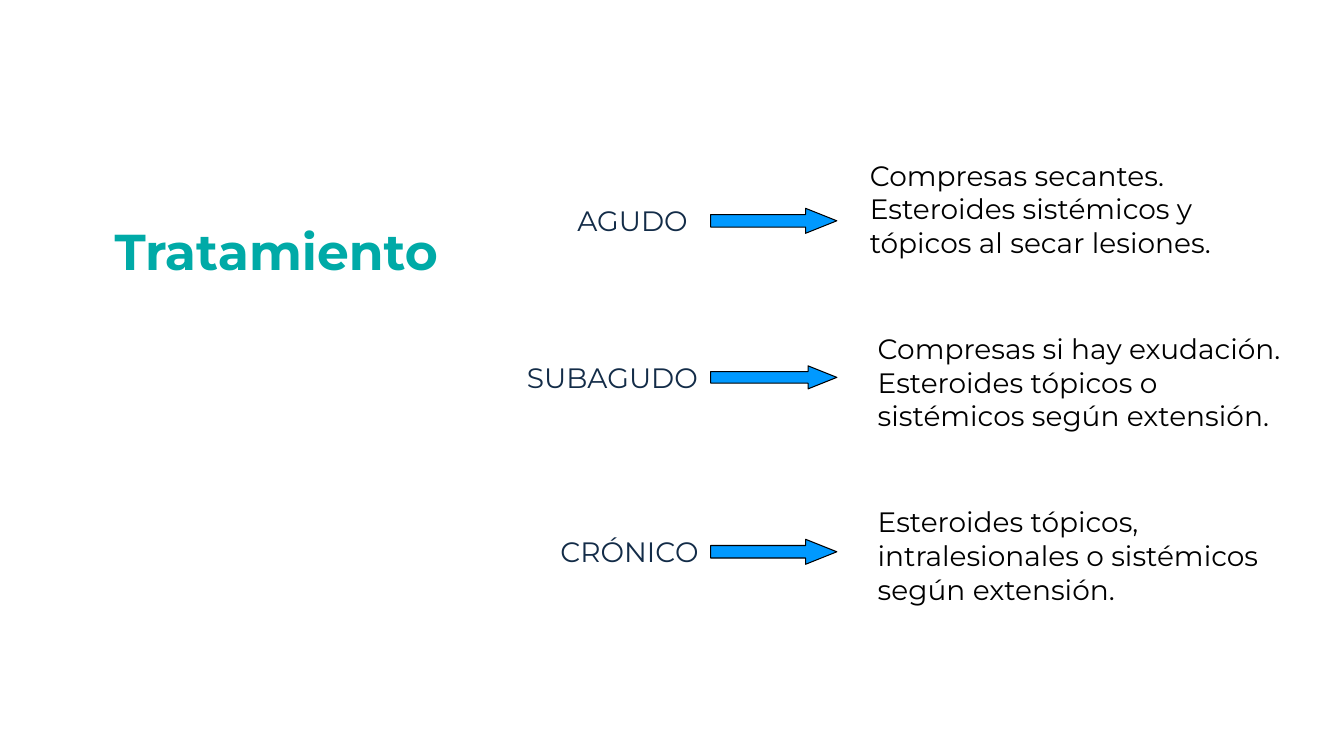
from dataclasses import dataclass

from pptx import Presentation
from pptx.dml.color import RGBColor
from pptx.enum.shapes import MSO_SHAPE
from pptx.enum.text import MSO_ANCHOR, MSO_AUTO_SIZE
from pptx.util import Cm, Pt


@dataclass
class Theme:
    font: str = "Montserrat"
    title: RGBColor = RGBColor(0x00, 0xAA, 0xA7)
    label: RGBColor = RGBColor(0x13, 0x2C, 0x48)
    ink: RGBColor = RGBColor(0, 0, 0)
    arrow: RGBColor = RGBColor(0x00, 0x99, 0xFF)
    head: Pt = Pt(36)
    body: Pt = Pt(20)
    line: Pt = Pt(0.75)


theme = Theme()


def add_text(slide, text, left, top, width, height, color, size, wrap=False):
    box = slide.shapes.add_textbox(Cm(left), Cm(top), Cm(width), Cm(height))
    frame = box.text_frame
    frame.text = text
    frame.word_wrap = wrap
    frame.auto_size = MSO_AUTO_SIZE.SHAPE_TO_FIT_TEXT
    for para in frame.paragraphs:
        for run in para.runs:
            run.font.name = theme.font
            run.font.size = size
            run.font.color.rgb = color
    return frame


deck = Presentation()
deck.slide_width, deck.slide_height = Cm(33.87), Cm(19.05)
slide = deck.slides.add_slide(deck.slide_layouts[6])

title = add_text(slide, "Tratamiento", 2.64, 5.56, 8.81, 1.68,
                 theme.title, theme.head, wrap=True)
title.auto_size = MSO_AUTO_SIZE.NONE
title.vertical_anchor = MSO_ANCHOR.MIDDLE
title.paragraphs[0].line_spacing = 0.9
title.paragraphs[0].runs[0].font.bold = True

# stage, (left, top, width), arrow height, advice, (left, width), wrap
stages = [
    ("AGUDO", (14.3, 5, 3.33), 0.63,
     "Compresas secantes.\nEsteroides sistémicos y\ntópicos al secar lesiones.",
     (21.67, 9.19), False),
    ("SUBAGUDO", (13.03, 8.97, 4.88), 0.58,
     "Compresas si hay exudación.\nEsteroides tópicos o\n"
     "sistémicos según extensión.",
     (21.87, 10.8), False),
    ("CRÓNICO", (13.87, 13.34, 4.04), 0.63,
     "Esteroides tópicos,\nintralesionales o sistémicos según extensión.",
     (21.87, 11.13), True),
]
first, step = 3.86, 4.37

for row, (stage, spot, tall, advice, span, wrap) in enumerate(stages):
    left, top, width = spot
    add_text(slide, stage, left, top, width, 1.11, theme.label, theme.body)

    arrow = slide.shapes.add_shape(MSO_SHAPE.RIGHT_ARROW, Cm(17.91),
                                   Cm(top + 0.25), Cm(3.18), Cm(tall))
    arrow.adjustments[0] = 0.5
    arrow.adjustments[1] = 1.25
    arrow.shadow.inherit = False
    arrow.fill.solid()
    arrow.fill.fore_color.rgb = theme.arrow
    arrow.line.color.rgb = theme.ink
    arrow.line.width = theme.line

    left, width = span
    add_text(slide, advice, left, first + row * step, width, 2.82,
             theme.ink, theme.body, wrap)

deck.save("out.pptx")
